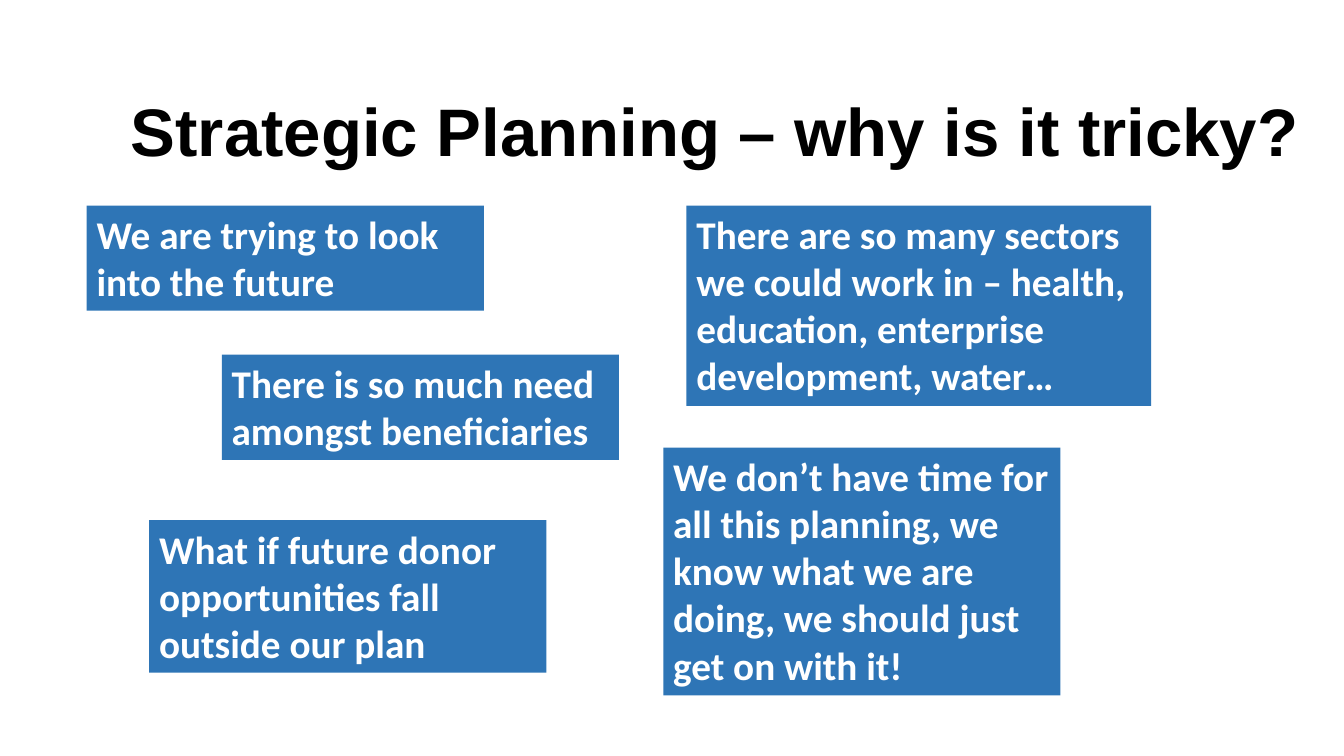
from pptx import Presentation
from pptx.dml.color import RGBColor
from pptx.enum.shapes import MSO_SHAPE
from pptx.enum.text import MSO_ANCHOR, MSO_AUTO_SIZE, PP_ALIGN
from pptx.util import Inches, Pt

RECTANGLE = MSO_SHAPE.RECTANGLE
TOP = MSO_ANCHOR.TOP
NO_FIT, GROW = MSO_AUTO_SIZE.NONE, MSO_AUTO_SIZE.SHAPE_TO_FIT_TEXT
LEFT, CENTER = PP_ALIGN.LEFT, PP_ALIGN.CENTER

BLACK = RGBColor(0x00, 0x00, 0x00)
WHITE = RGBColor(0xFF, 0xFF, 0xFF)
BLUE = RGBColor(0x2E, 0x75, 0xB6)

WIDTH, HEIGHT = Inches(13.33), Inches(7.5)
COLUMN, ROW = WIDTH / 100, HEIGHT / 100
TITLE_BOX = (6.45, 11.2, 93.55, 13)
LINE_ROWS, PADDING_ROWS = 6.29, 1.33
NARROW, WIDE = 29.55, 34.58

# Column, row, columns wide, lines of text, wording
CONCERNS = [
    (6.45, 27.2, NARROW, 2, "We are trying to look into the future"),
    (16.5, 46.93, NARROW, 2, "There is so much need amongst beneficiaries"),
    (51.08, 27.2, WIDE, 4, "There are so many sectors we could work in – health, "
                           "education, enterprise development, water…"),
    (11.1, 68.8, NARROW, 3, "What if future donor opportunities fall outside our plan"),
    (49.35, 59.2, NARROW, 5, "We don’t have time for all this planning, we know what "
                             "we are doing, we should just get on with it!"),
]


def grid_box(column, row, columns, rows):
    """Turn grid columns and rows into left, top, width and height."""
    return (round(column * COLUMN), round(row * ROW),
            round(columns * COLUMN), round(rows * ROW))


def write(shape, text, *, font, size, color, align, fit):
    frame = shape.text_frame
    frame.word_wrap = True
    frame.auto_size = fit
    frame.vertical_anchor = TOP
    para = frame.paragraphs[0]
    para.alignment = align
    span = para.add_run()
    span.text = text
    span.font.name = font
    span.font.size = Pt(size)
    span.font.bold = True
    span.font.color.rgb = color


def place_title(page, box, text):
    title = page.shapes.title
    title.left, title.top, title.width, title.height = box
    write(title, text, font="Arial", size=48, color=BLACK, align=CENTER, fit=NO_FIT)


def add_concern(page, box, text):
    shape = page.shapes.add_shape(RECTANGLE, *box)
    shape.shadow.inherit = False
    shape.fill.solid()
    shape.fill.fore_color.rgb = BLUE
    shape.line.fill.background()
    write(shape, text, font="Calibri", size=28, color=WHITE, align=LEFT, fit=GROW)


def main():
    deck = Presentation()
    deck.slide_width, deck.slide_height = WIDTH, HEIGHT
    title_only = deck.slide_layouts[5]
    page = deck.slides.add_slide(title_only)
    place_title(page, grid_box(*TITLE_BOX), "Strategic Planning – why is it tricky?")
    for column, row, columns, lines, text in CONCERNS:
        rows = lines * LINE_ROWS + PADDING_ROWS
        add_concern(page, grid_box(column, row, columns, rows), text)
    deck.save("out.pptx")


if __name__ == "__main__":
    main()
